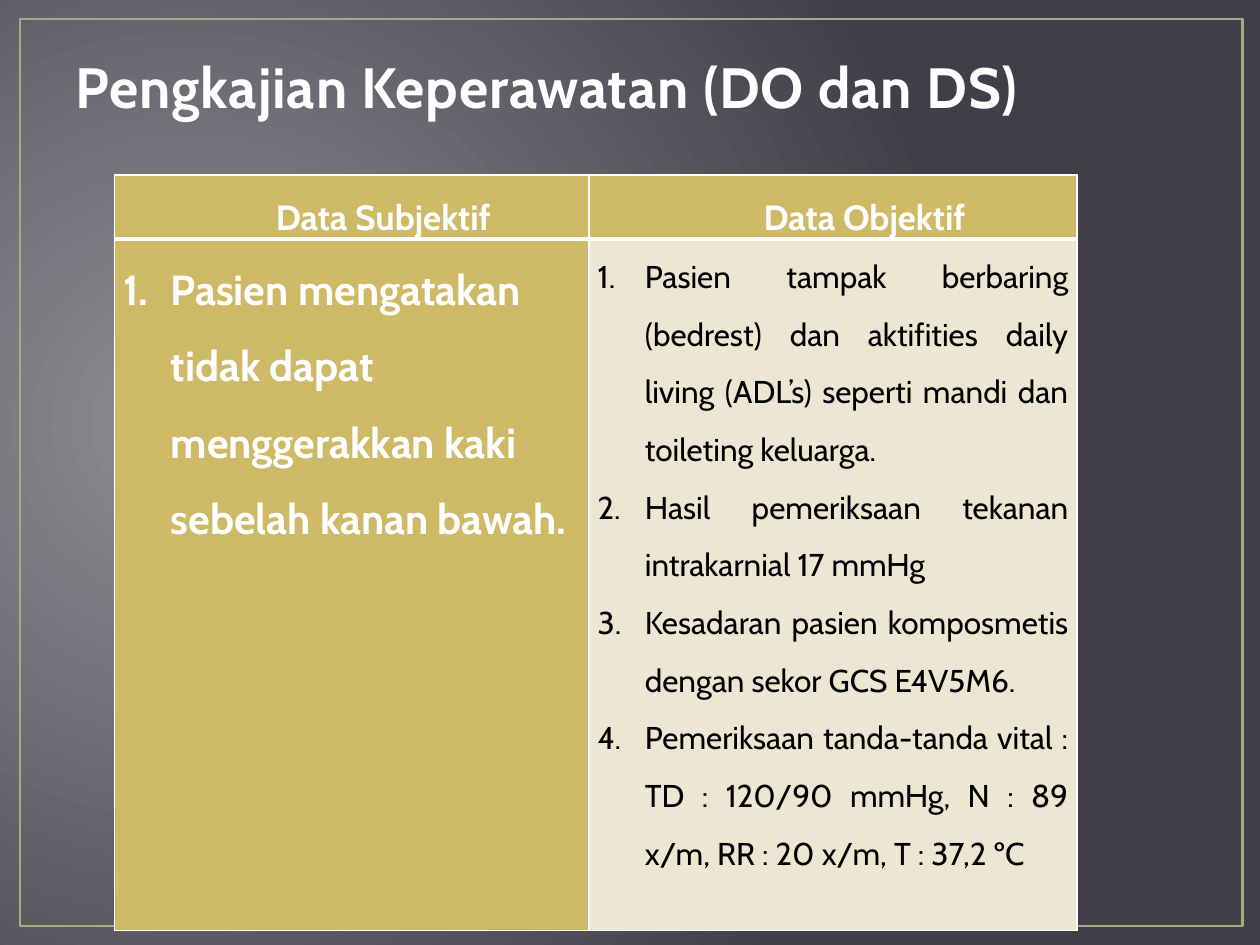
import pptx
import pptx.util
import pptx.dml.color
import pptx.enum.shapes
import pptx.enum.text
import pptx.oxml
import pptx.oxml.ns
from lxml import etree

Pt = pptx.util.Pt
Align = pptx.enum.text.PP_ALIGN
Anchor = pptx.enum.text.MSO_ANCHOR
qn = pptx.oxml.ns.qn
FONT = "Cabin"
GOLD, CREAM, WHITE, BLACK = "CEB966", "EDE6D3", "FFFFFF", "000000"

SUBJECTIVE = ["Pasien mengatakan tidak dapat menggerakkan kaki sebelah kanan bawah."]
OBJECTIVE = [
    "Pasien tampak berbaring (bedrest) dan aktifities daily living (ADL’s) "
    "seperti mandi dan toileting keluarga.",
    "Hasil pemeriksaan tekanan intrakarnial 17 mmHg",
    "Kesadaran pasien komposmetis dengan sekor GCS E4V5M6.",
    "Pemeriksaan tanda-tanda vital : TD : 120/90 mmHg, N : 89 x/m, "
    "RR : 20 x/m, T : 37,2 ºC",
]


def color(hex_string):
    return pptx.dml.color.RGBColor.from_string(hex_string)


def style_font(font, size, hex_string, bold):
    font.name = FONT
    font.size = Pt(size)
    font.bold = bold
    font.color.rgb = color(hex_string)


def paint_background(slide):
    fill = slide.background.fill
    fill.gradient()
    for stop, shade in zip(fill.gradient_stops, ("8F8D94", "423E48")):
        stop.color.rgb = color(shade)
    # Radial gradient in place of the default linear one
    grad = slide.background._cSld.find(".//" + qn("a:gradFill"))
    linear = grad.find(qn("a:lin"))
    radial = etree.Element(qn("a:path"), path="circle")
    etree.SubElement(radial, qn("a:fillToRect"),
                     l="15000", t="50000", r="85000", b="60000")
    grad.replace(linear, radial)


def add_frame(slide, left, top, width, height):
    frame = slide.shapes.add_shape(pptx.enum.shapes.MSO_SHAPE.RECTANGLE,
                                   Pt(left), Pt(top), Pt(width), Pt(height))
    frame.shadow.inherit = False
    frame.fill.background()
    frame.line.color.rgb = color("9CB084")
    frame.line.width = Pt(1.5)


def place_title(slide, left, top, width, height):
    title = slide.shapes.title
    title.left, title.top = Pt(left), Pt(top)
    title.width, title.height = Pt(width), Pt(height)
    text = title.text_frame
    text.text = "Pengkajian Keperawatan (DO dan DS)"
    text.word_wrap = True
    text.vertical_anchor = Anchor.BOTTOM
    text.margin_bottom = Pt(43)
    heading = text.paragraphs[0]
    heading.alignment = Align.LEFT
    style_font(heading.font, 32.4, "FEFEFE", True)
    heading.font._element.set("spc", "50")


def border_cell(cell, widths):
    properties = cell._tc.get_or_add_tcPr()
    for index, (side, width) in enumerate(zip("LRTB", widths)):
        line = etree.Element(qn("a:ln" + side), w=str(Pt(width)))
        solid = etree.SubElement(line, qn("a:solidFill"))
        etree.SubElement(solid, qn("a:srgbClr"), val=WHITE)
        properties.insert(index, line)


def fill_cell(cell, lines, fill, size, hex_string, bold, align,
              margin, indent, numbered, borders):
    cell.fill.solid()
    cell.fill.fore_color.rgb = color(fill)
    border_cell(cell, borders)
    cell.margin_left = cell.margin_right = Pt(5)
    cell.margin_top = cell.margin_bottom = 0
    cell.text_frame.text = "\n".join(lines)
    for paragraph in cell.text_frame.paragraphs:
        paragraph.alignment = align
        paragraph.line_spacing = 1.5
        layout = paragraph._p.get_or_add_pPr()
        layout.set("marL", str(Pt(margin)))
        layout.set("indent", str(Pt(indent)))
        if numbered:
            etree.SubElement(layout, qn("a:buFont"), typeface="+mj-lt")
            etree.SubElement(layout, qn("a:buAutoNum"), type="arabicPeriod")
        style_font(paragraph.font, size, hex_string, bold)


def add_findings(slide, left, top, column_widths, row_heights):
    table = slide.shapes.add_table(
        len(row_heights), len(column_widths), Pt(left), Pt(top),
        Pt(sum(column_widths)), Pt(sum(row_heights))).table
    for column, width in zip(table.columns, column_widths):
        column.width = Pt(width)
    for row, height in zip(table.rows, row_heights):
        row.height = Pt(height)

    # Header row
    for index, heading in enumerate(("Data Subjektif", "Data Objektif")):
        fill_cell(table.cell(0, index), [heading], GOLD, 20, WHITE, True,
                  Align.CENTER, 36, 0, False, (1, 1, 1, 3))

    # Numbered findings
    body = ((SUBJECTIVE, GOLD, 24, WHITE, True, Align.LEFT),
            (OBJECTIVE, CREAM, 18, BLACK, False, Align.JUSTIFY))
    for index, findings in enumerate(body):
        fill_cell(table.cell(1, index), *findings, 27, -27, True, (1, 1, 3, 1))


def main():
    deck = pptx.Presentation()
    deck.slide_width, deck.slide_height = Pt(720), Pt(540)
    slide = deck.slides.add_slide(deck.slide_layouts[5])
    paint_background(slide)
    add_frame(slide, 11.5, 10.8, 698.4, 518.4)
    place_title(slide, 36, 21.6, 648, 90)
    add_findings(slide, 65.5, 100, (271, 279), (36.5, 395))
    deck.save("out.pptx")


if __name__ == "__main__":
    main()
